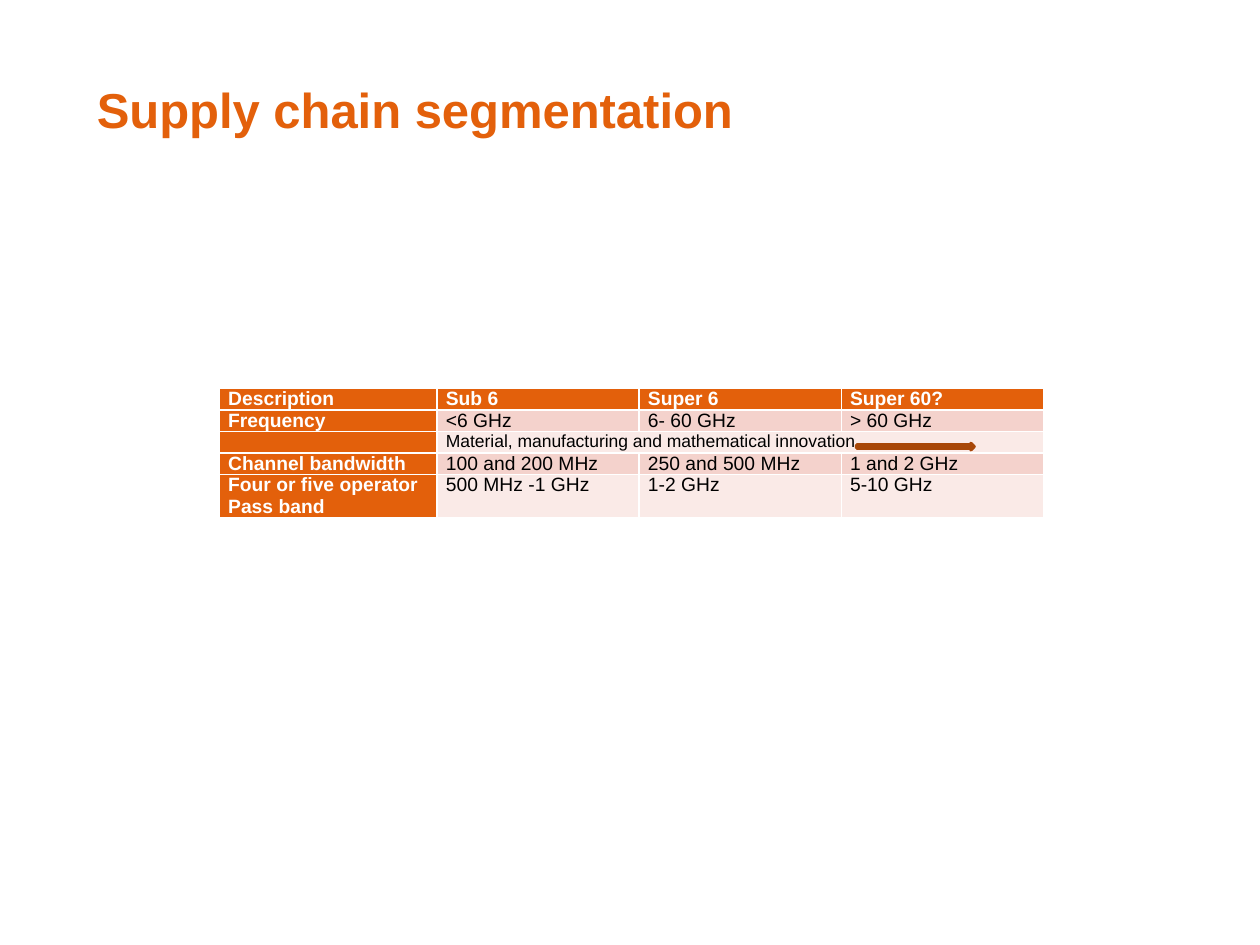
from pptx import Presentation
from pptx.dml.color import RGBColor
from pptx.enum import shapes, text
from pptx.util import Pt

ORANGE = RGBColor(0xE3, 0x60, 0x0B)
RUST = RGBColor(0xA8, 0x47, 0x08)
PINK = RGBColor(0xF4, 0xD2, 0xCC)
PALE = RGBColor(0xFA, 0xEA, 0xE7)
WHITE = RGBColor(0xFF, 0xFF, 0xFF)
BLACK = RGBColor(0, 0, 0)

prs = Presentation()
prs.slide_width, prs.slide_height = Pt(720), Pt(540)
slide = prs.slides.add_slide(prs.slide_layouts[5])

# Title
title = slide.shapes.title
title.left, title.top, title.width, title.height = Pt(40.3), Pt(46.8), Pt(665.3), Pt(36)
title.text_frame.vertical_anchor = text.MSO_ANCHOR.BOTTOM
title.text_frame.margin_left = Pt(15)
title.text_frame.text = "Supply chain segmentation"
heading = title.text_frame.paragraphs[0]
heading.alignment = text.PP_ALIGN.LEFT
heading.font.name, heading.font.size, heading.font.bold = "Arial", Pt(28), True
heading.font.color.rgb = ORANGE

# Segment table: the built-in style supplies the white rules
INNOVATION_ROW = 2
rows = [
    ["Description", "Sub 6", "Super 6", "Super 60?"],
    ["Frequency", "<6 GHz", "6- 60 GHz", "> 60 GHz"],
    ["", "Material, manufacturing and mathematical innovation", "", ""],
    ["Channel bandwidth", "100 and 200 MHz", "250 and 500 MHz", "1 and 2 GHz"],
    ["Four or five operator\nPass band", "500 MHz -1 GHz", "1-2 GHz", "5-10 GHz"],
]
row_heights = [12.3, 12.3, 12.3, 12.3, 24.6]
column_widths = [124.4, 115.5, 115.5, 115.5]
segments = slide.shapes.add_table(
    len(rows), len(column_widths), Pt(125.4), Pt(222),
    Pt(sum(column_widths)), Pt(sum(row_heights))).table
segments.first_col = True
for column, width in zip(segments.columns, column_widths):
    column.width = Pt(width)

for r, labels in enumerate(rows):
    segments.rows[r].height = Pt(row_heights[r])
    for c, label in enumerate(labels):
        cell = segments.cell(r, c)
        is_header = r == 0 or c == 0
        cell.margin_left = cell.margin_right = Pt(5)
        cell.margin_top = cell.margin_bottom = Pt(0)
        cell.fill.solid()
        cell.fill.fore_color.rgb = ORANGE if is_header else PINK if r % 2 else PALE
        cell.text = label
        for line in cell.text_frame.paragraphs:
            line.alignment = text.PP_ALIGN.LEFT
            line.font.name = "Arial"
            line.font.size = Pt(10 if r == INNOVATION_ROW else 11)
            line.font.bold = is_header
            line.font.color.rgb = WHITE if is_header else BLACK
segments.cell(INNOVATION_ROW, 1).merge(segments.cell(INNOVATION_ROW, 3))

# Innovation arrow
arrow = slide.shapes.add_shape(
    shapes.MSO_SHAPE.RIGHT_ARROW, Pt(489.6), Pt(253.4), Pt(67), Pt(3.6))
arrow.shadow.inherit = False
arrow.fill.solid()
arrow.fill.fore_color.rgb = ORANGE
arrow.line.color.rgb = RUST
arrow.line.width = Pt(2)

prs.save("out.pptx")
